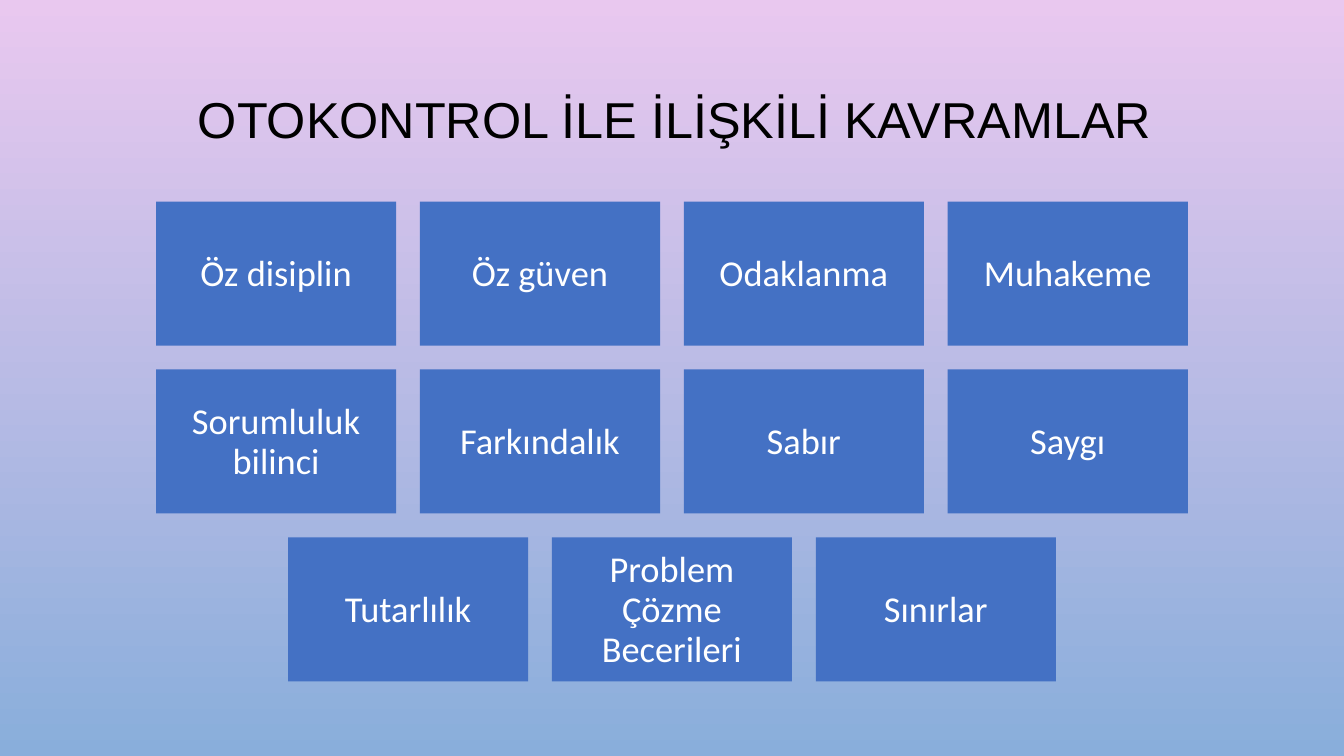
from pptx import Presentation
from pptx.dml.color import RGBColor
from pptx.enum.shapes import MSO_SHAPE
from pptx.enum.text import MSO_ANCHOR, MSO_AUTO_SIZE, PP_ALIGN
from pptx.util import Cm, Pt

SLIDE_WIDTH, SLIDE_HEIGHT = 33.87, 19.05
BOX_WIDTH, BOX_HEIGHT, GAP = 6.05, 3.63, 0.6
FIRST_ROW_TOP = 5.08
CONCEPT_ROWS = [
    ["Öz disiplin", "Öz güven", "Odaklanma", "Muhakeme"],
    ["Sorumluluk bilinci", "Farkındalık", "Sabır", "Saygı"],
    ["Tutarlılık", "Problem Çözme Becerileri", "Sınırlar"],
]


def color(value):
    return RGBColor.from_string(value)


def write_text(shape, text, *, font, size, fill, margins, line_spacing=None):
    frame = shape.text_frame
    frame.word_wrap = True
    frame.auto_size = MSO_AUTO_SIZE.NONE
    frame.vertical_anchor = MSO_ANCHOR.MIDDLE
    left, top, right, bottom = (Cm(margin) for margin in margins)
    frame.margin_left, frame.margin_top = left, top
    frame.margin_right, frame.margin_bottom = right, bottom
    paragraph = frame.paragraphs[0]
    paragraph.alignment = PP_ALIGN.CENTER
    paragraph.space_before = Pt(0)
    paragraph.line_spacing = line_spacing
    run = paragraph.add_run()
    run.text = text
    run.font.name = font
    run.font.size = Pt(size)
    run.font.color.rgb = color(fill)


class ConceptSlide:
    title_font, box_font = "Arial", "Calibri"
    title_color, box_color, box_text_color = "000000", "4471C4", "FFFFFF"

    def __init__(self, presentation):
        self.slide = presentation.slides.add_slide(presentation.slide_layouts[5])

    def background(self, top_color, bottom_color):
        fill = self.slide.background.fill
        fill.gradient()
        fill.gradient_angle = 270
        for stop, value in zip(fill.gradient_stops, (top_color, bottom_color)):
            stop.color.rgb = color(value)

    def title(self, text, left, top, width, height):
        title = self.slide.shapes.title
        title.left, title.top = Cm(left), Cm(top)
        title.width, title.height = Cm(width), Cm(height)
        write_text(title, text, font=self.title_font, size=36,
                   fill=self.title_color, margins=(0.76, 1.27, 0, 0), line_spacing=1.0)

    def box(self, text, left, top):
        box = self.slide.shapes.add_shape(
            MSO_SHAPE.RECTANGLE, Cm(left), Cm(top), Cm(BOX_WIDTH), Cm(BOX_HEIGHT))
        box.shadow.inherit = False
        box.fill.solid()
        box.fill.fore_color.rgb = color(self.box_color)
        box.line.fill.background()
        write_text(box, text, font=self.box_font, size=26, fill=self.box_text_color,
                   margins=(0.7, 0, 0.7, 0), line_spacing=Pt(28.6))

    def centered_row(self, concepts, top):
        row_width = len(concepts) * (BOX_WIDTH + GAP) - GAP
        row_left = (SLIDE_WIDTH - row_width) / 2
        for column, concept in enumerate(concepts):
            self.box(concept, row_left + column * (BOX_WIDTH + GAP), top)


def main():
    presentation = Presentation()
    presentation.slide_width = Cm(SLIDE_WIDTH)
    presentation.slide_height = Cm(SLIDE_HEIGHT)
    concept_slide = ConceptSlide(presentation)
    concept_slide.background("E9C8EF", "89AEDB")
    concept_slide.title("OTOKONTROL İLE İLİŞKİLİ KAVRAMLAR", 2.29, 0.94, 28.68, 2.82)
    for row, concepts in enumerate(CONCEPT_ROWS):
        concept_slide.centered_row(concepts, FIRST_ROW_TOP + row * (BOX_HEIGHT + GAP))
    presentation.save("out.pptx")


if __name__ == "__main__":
    main()
